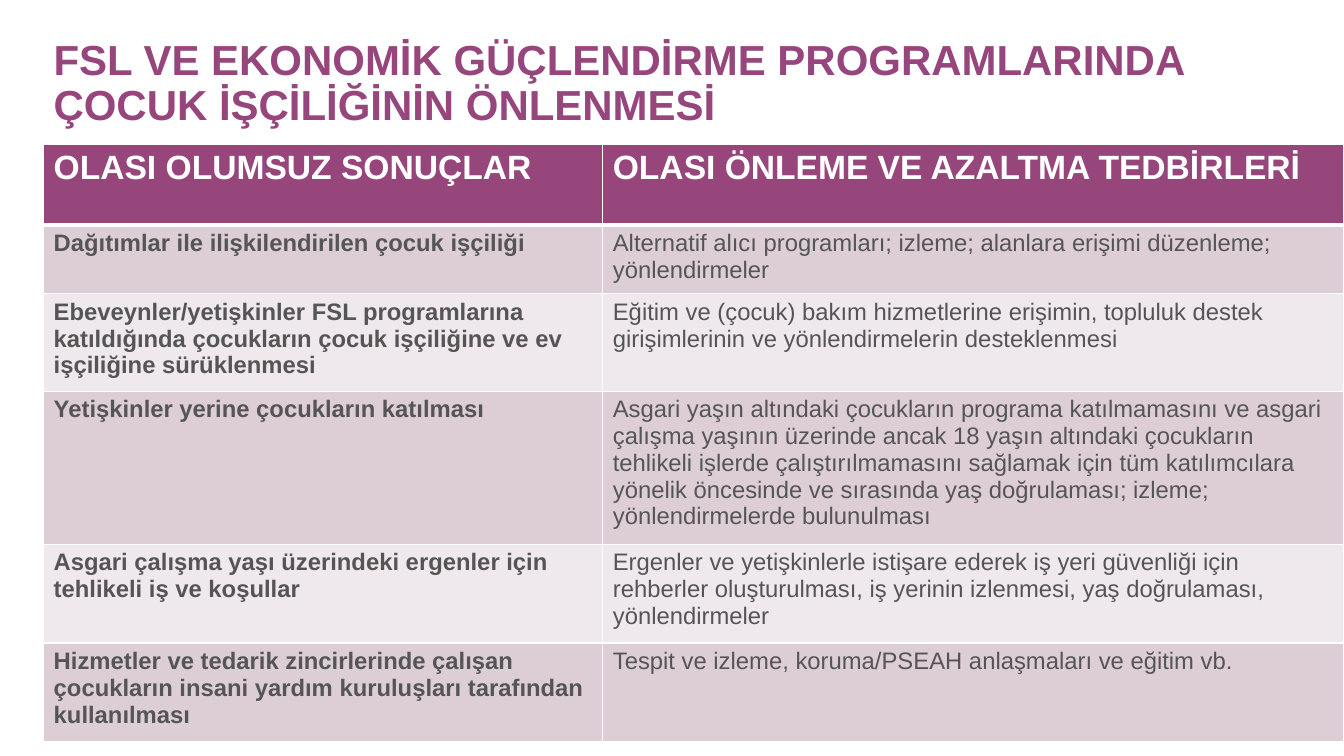
from dataclasses import dataclass

from lxml import etree
from pptx import Presentation
from pptx import util as u
from pptx.dml import color
from pptx.enum import text
from pptx.oxml import ns


@dataclass(frozen=True)
class Theme:
    font: str = "Arial"
    title: str = "97467D"
    header: str = "97467C"
    body: str = "545554"
    white: str = "FFFFFF"
    bands: tuple = ("DDCED6", "EFE8EC")
    title_size: int = 30
    header_size: int = 24
    body_size: int = 17
    border: int = 1
    header_border: int = 3


THEME = Theme()

TITLE = "FSL VE EKONOMİK GÜÇLENDİRME PROGRAMLARINDA ÇOCUK İŞÇİLİĞİNİN ÖNLENMESİ"
HEADERS = ("OLASI OLUMSUZ SONUÇLAR", "OLASI ÖNLEME VE AZALTMA TEDBİRLERİ")
MEASURES = (
    ("Dağıtımlar ile ilişkilendirilen çocuk işçiliği",
     "Alternatif alıcı programları; izleme; alanlara erişimi düzenleme; yönlendirmeler"),
    ("Ebeveynler/yetişkinler FSL programlarına katıldığında çocukların çocuk işçiliğine "
     "ve ev işçiliğine sürüklenmesi",
     "Eğitim ve (çocuk) bakım hizmetlerine erişimin, topluluk destek girişimlerinin ve "
     "yönlendirmelerin desteklenmesi"),
    ("Yetişkinler yerine çocukların katılması",
     "Asgari yaşın altındaki çocukların programa katılmamasını ve asgari çalışma yaşının "
     "üzerinde ancak 18 yaşın altındaki çocukların tehlikeli işlerde çalıştırılmamasını "
     "sağlamak için tüm katılımcılara yönelik öncesinde ve sırasında yaş doğrulaması; "
     "izleme; yönlendirmelerde bulunulması"),
    ("Asgari çalışma yaşı üzerindeki ergenler için tehlikeli iş ve koşullar",
     "Ergenler ve yetişkinlerle istişare ederek iş yeri güvenliği için rehberler "
     "oluşturulması, iş yerinin izlenmesi, yaş doğrulaması, yönlendirmeler"),
    ("Hizmetler ve tedarik zincirlerinde çalışan çocukların insani yardım kuruluşları "
     "tarafından kullanılması",
     "Tespit ve izleme, koruma/PSEAH anlaşmaları ve eğitim vb."),
)
COLUMN_SHARES = (0.43, 0.57)
ROW_HEIGHTS = (2.03, 1.73, 2.46, 3.63, 2.49, 2.49)


def set_all(obj, values):
    for name, value in values.items():
        setattr(obj, name, value)


def write(p, words, size, rgb, bold):
    r = p.add_run()
    r.text = words
    set_all(r.font, {"name": THEME.font, "size": u.Pt(size), "bold": bold})
    r.font.color.rgb = color.RGBColor.from_string(rgb)


def set_borders(cell, widths):
    tc_pr = cell._tc.get_or_add_tcPr()
    for i, (side, width) in enumerate(widths.items()):
        ln = etree.Element(ns.qn(f"a:ln{side}"), w=str(u.Pt(width)))
        fill = etree.SubElement(ln, ns.qn("a:solidFill"))
        etree.SubElement(fill, ns.qn("a:srgbClr"), val=THEME.white)
        tc_pr.insert(i, ln)


def add_title(s, left, top, width, height):
    sp = s.shapes.add_textbox(*map(u.Cm, (left, top, width, height)))
    tf = sp.text_frame
    set_all(tf, {
        "word_wrap": True,
        "vertical_anchor": text.MSO_ANCHOR.TOP,
        "margin_left": u.Cm(0.25),
        "margin_right": u.Cm(0.25),
        "margin_top": u.Cm(0.2),
        "margin_bottom": u.Cm(0.13),
    })
    p = tf.paragraphs[0]
    p.line_spacing = 0.9
    write(p, TITLE, THEME.title_size, THEME.title, True)


def add_measures(s, left, top, width):
    rows = (HEADERS,) + MEASURES
    box = map(u.Cm, (left, top, width, sum(ROW_HEIGHTS)))
    table = s.shapes.add_table(len(rows), len(HEADERS), *box).table
    table.horz_banding = False
    for column, share in zip(table.columns, COLUMN_SHARES):
        column.width = u.Cm(width * share)
    for i, (row, height, words) in enumerate(zip(table.rows, ROW_HEIGHTS, rows)):
        row.height = u.Cm(height)
        header = i == 0
        fill = THEME.header if header else THEME.bands[(i - 1) % 2]
        size = THEME.header_size if header else THEME.body_size
        rgb = THEME.white if header else THEME.body
        widths = dict.fromkeys("LRTB", THEME.border)
        if i < 2:
            widths["B" if header else "T"] = THEME.header_border
        for j, cell in enumerate(row.cells):
            cell.fill.solid()
            cell.fill.fore_color.rgb = color.RGBColor.from_string(fill)
            set_borders(cell, widths)
            write(cell.text_frame.paragraphs[0], words[j], size, rgb, header or j == 0)


def main():
    prs = Presentation()
    set_all(prs, {"slide_width": u.Cm(33.87), "slide_height": u.Cm(19.05)})
    s = prs.slides.add_slide(prs.slide_layouts[6])
    add_title(s, 1.1, 0.79, 31.67, 3.68)
    add_measures(s, 1.1, 3.64, 32.77)
    prs.save("out.pptx")


if __name__ == "__main__":
    main()
